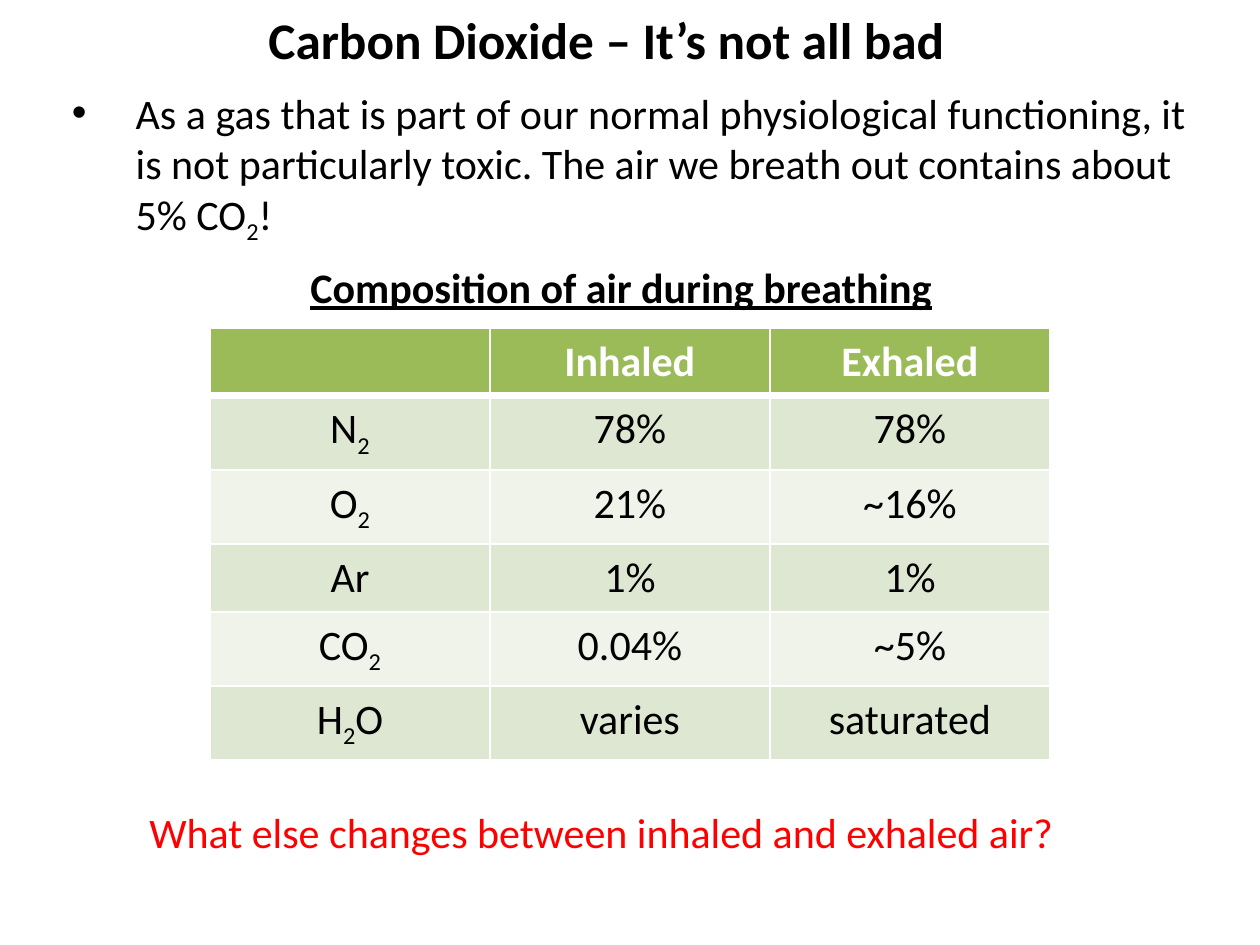
"""Build a slide comparing the composition of inhaled and exhaled air."""
from lxml.etree import SubElement
from pptx import Presentation
from pptx.dml.color import RGBColor
from pptx.enum.text import MSO_AUTO_SIZE, PP_ALIGN
from pptx.oxml.ns import qn
from pptx.util import Inches, Pt

BLACK = RGBColor(0x00, 0x00, 0x00)
WHITE = RGBColor(0xFF, 0xFF, 0xFF)
RED = RGBColor(0xFF, 0x00, 0x00)
GREEN = RGBColor(0x9B, 0xBB, 0x59)
BANDS = (RGBColor(0xDE, 0xE7, 0xD1), RGBColor(0xEF, 0xF3, 0xEA))

SLIDE_WIDTH = Inches(7.5)
SLIDE_HEIGHT = SLIDE_WIDTH * 3 // 4

TEXT_BOXES = [
    ("Carbon Dioxide – It’s not all bad", (1.5, 0, 4.67, 0.47),
     {"size": 22, "bold": True}),
    ("As a gas that is part of our normal physiological functioning, it is not "
     "particularly toxic. The air we breath out contains about 5% CO_2!",
     (0.33, 0.47, 6.84, 1.01), {"bullet": True}),
    ("Composition of air during breathing", (1.75, 1.51, 4, 0.4),
     {"bold": True, "underline": True}),
    ("What else changes between inhaled and exhaled air?", (0.79, 4.75, 5.92, 0.4),
     {"color": RED}),
]
AIR_TABLE_BOX = (1.25, 1.95, 5, 2.43)
AIR_ROWS = [
    ("", "Inhaled", "Exhaled"),
    ("N_2", "78%", "78%"),
    ("O_2", "21%", "~16%"),
    ("Ar", "1%", "1%"),
    ("CO_2", "0.04%", "~5%"),
    ("H_2O", "varies", "saturated"),
]


def write_text(frame, text, size=18, color=BLACK, bold=False, underline=False,
               bullet=False, align=PP_ALIGN.LEFT):
    """Write one paragraph, lowering each character that follows an underscore."""
    paragraph = frame.paragraphs[0]
    paragraph.alignment = align
    paragraph.font.size = Pt(size)
    if bullet:
        properties = paragraph._p.get_or_add_pPr()
        properties.set("marL", str(Inches(0.38)))
        properties.set("indent", str(Inches(-0.38)))
        default_run = properties.find(qn("a:defRPr"))
        properties.remove(default_run)
        SubElement(properties, qn("a:buFont")).set("typeface", "Arial")
        SubElement(properties, qn("a:buChar")).set("char", "•")
        properties.append(default_run)
    first, *rest = text.split("_")
    pieces = [(first, False)]
    for part in rest:
        pieces += [(part[0], True), (part[1:], False)]
    for piece, lowered in pieces:
        if not piece:
            continue
        run = paragraph.add_run()
        run.text = piece
        font = run.font
        font.name, font.size = "Calibri", Pt(size)
        font.bold, font.underline = bold, underline
        font.color.rgb = color
        if lowered:
            run._r.get_or_add_rPr().set("baseline", "-25000")


def set_borders(cell, top, bottom):
    """Draw white cell borders with the given top and bottom widths."""
    properties = cell._tc.get_or_add_tcPr()
    for side, width in (("L", 1), ("R", 1), ("T", top), ("B", bottom)):
        line = SubElement(properties, qn(f"a:ln{side}"), w=str(Pt(width)))
        fill = SubElement(line, qn("a:solidFill"))
        SubElement(fill, qn("a:srgbClr"), val=str(WHITE))


def add_text_box(slide, text, box, **text_format):
    """Add a wrapped text box."""
    frame = slide.shapes.add_textbox(*map(Inches, box)).text_frame
    frame.word_wrap = True
    frame.auto_size = MSO_AUTO_SIZE.SHAPE_TO_FIT_TEXT
    write_text(frame, text, **text_format)


def add_air_table(slide):
    """Add the table with a green header and banded rows."""
    table = slide.shapes.add_table(
        len(AIR_ROWS), len(AIR_ROWS[0]), *map(Inches, AIR_TABLE_BOX)).table
    for row, values in enumerate(AIR_ROWS):
        header = row == 0
        for column, value in enumerate(values):
            cell = table.cell(row, column)
            set_borders(cell, 3 if row == 1 else 1, 3 if header else 1)
            cell.fill.solid()
            cell.fill.fore_color.rgb = GREEN if header else BANDS[(row - 1) % 2]
            write_text(cell.text_frame, value, bold=header,
                       color=WHITE if header else BLACK, align=PP_ALIGN.CENTER)


def main():
    """Create and save the presentation."""
    presentation = Presentation()
    presentation.slide_width = SLIDE_WIDTH
    presentation.slide_height = SLIDE_HEIGHT
    slide = presentation.slides.add_slide(presentation.slide_layouts[6])
    for text, box, text_format in TEXT_BOXES:
        add_text_box(slide, text, box, **text_format)
    add_air_table(slide)
    presentation.save("out.pptx")


if __name__ == "__main__":
    main()
